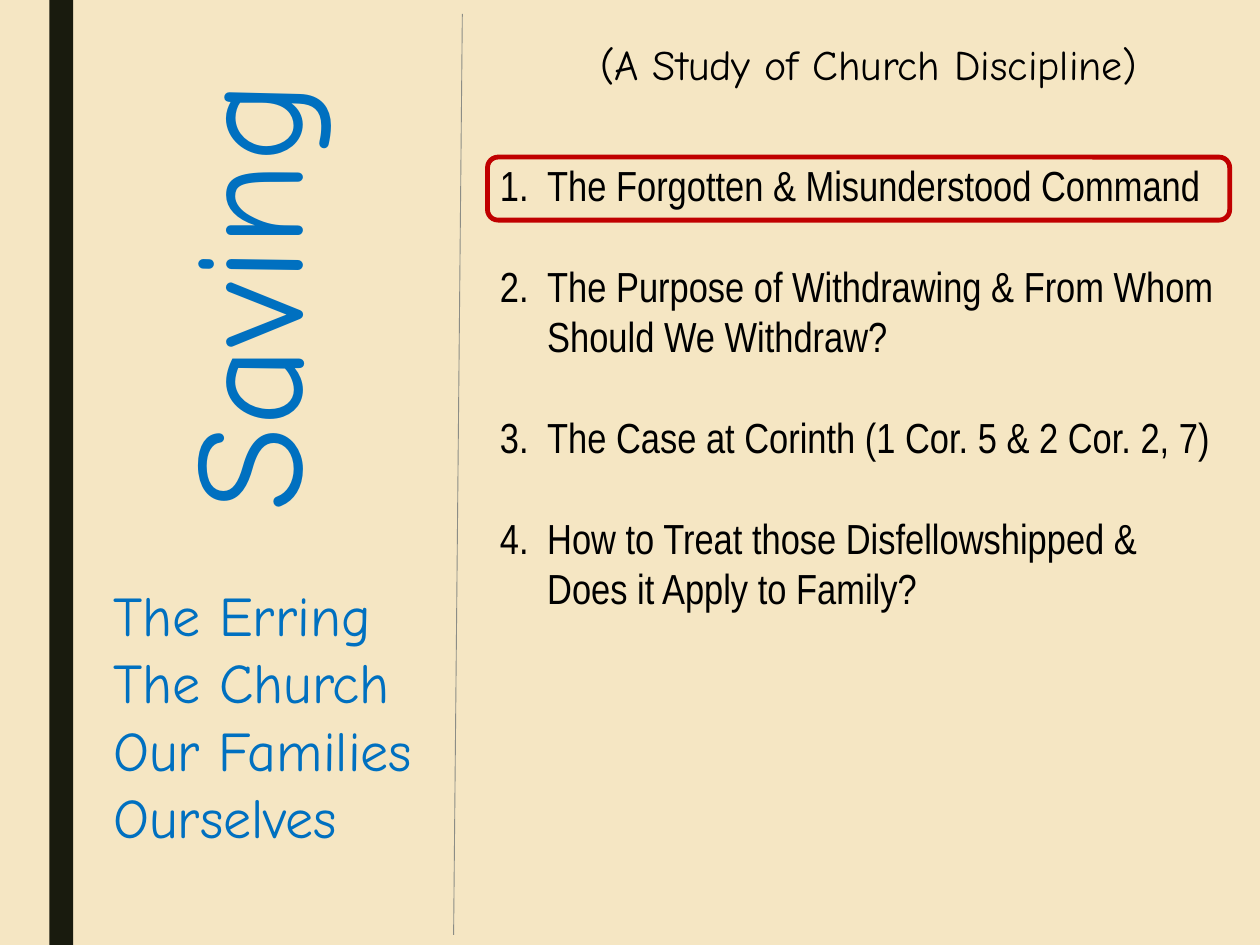
from lxml.etree import SubElement
from pptx import Presentation
from pptx.dml.color import RGBColor
from pptx.enum.shapes import MSO_CONNECTOR, MSO_SHAPE
from pptx.enum.text import MSO_AUTO_SIZE, PP_ALIGN
from pptx.oxml.ns import qn
from pptx.util import Pt


def color(value):
    return RGBColor.from_string(value)


def apply_format(target, values):
    for name, value in values.items():
        setattr(target, name, value)


class SlideBuilder:
    background = "F5E6C3"
    bar = "191B0E"
    accent = "0070C0"
    text = "000000"
    rule = "8C8D86"
    highlight = "C00000"
    display_font = "Comic Neue"
    body_font = "Arial Narrow"

    def __init__(self, slide):
        self.slide = slide
        slide.background.fill.solid()
        slide.background.fill.fore_color.rgb = color(self.background)

    def add_box(self, kind, bounds, fill=None, line=None, width=0):
        shape = self.slide.shapes.add_shape(kind, *map(Pt, bounds))
        shape.shadow.inherit = False
        if fill:
            shape.fill.solid()
            shape.fill.fore_color.rgb = color(fill)
        else:
            shape.fill.background()
        if line:
            shape.line.color.rgb = color(line)
            shape.line.width = Pt(width)
        else:
            shape.line.fill.background()
        return shape

    def add_rule(self, start, end, width):
        connector = self.slide.shapes.add_connector(
            MSO_CONNECTOR.STRAIGHT, *map(Pt, start + end))
        connector.line.color.rgb = color(self.rule)
        connector.line.width = Pt(width)
        SubElement(connector._element.spPr, qn("a:effectLst"))

    def add_text(self, lines, bounds, size, font, fill, wrap=True,
                 alignment=PP_ALIGN.LEFT, rotation=0):
        shape = self.slide.shapes.add_textbox(*map(Pt, bounds))
        shape.rotation = rotation
        frame = shape.text_frame
        apply_format(frame, {
            "word_wrap": wrap,
            "auto_size": MSO_AUTO_SIZE.SHAPE_TO_FIT_TEXT,
            "text": "\n".join(lines),
        })
        for paragraph in frame.paragraphs:
            paragraph.alignment = alignment
            run_font = paragraph.runs[0].font
            apply_format(run_font, {"name": font, "size": Pt(size)})
            run_font.color.rgb = color(fill)
        return frame

    def add_numbered_list(self, items, bounds, size, indent, gap):
        frame = self.add_text(items, bounds, size, self.body_font, self.text)
        for index, paragraph in enumerate(frame.paragraphs):
            paragraph.space_before = Pt(gap if index else 0)
            properties = paragraph._p.get_or_add_pPr()
            properties.set("marL", str(Pt(indent)))
            properties.set("indent", str(-Pt(indent)))
            SubElement(properties, qn("a:buFont"), typeface="+mj-lt")
            SubElement(properties, qn("a:buAutoNum"), type="arabicPeriod")


def main():
    presentation = Presentation()
    apply_format(presentation, {"slide_width": Pt(720), "slide_height": Pt(540)})
    slide = presentation.slides.add_slide(presentation.slide_layouts[6])
    builder = SlideBuilder(slide)

    builder.add_box(MSO_SHAPE.RECTANGLE, (28.2, 0, 13.6, 540), fill=builder.bar)
    builder.add_text(["Saving"], (-12.2, 112.3, 301, 113.8), 88,
                     builder.display_font, builder.accent,
                     alignment=PP_ALIGN.CENTER, rotation=270)
    builder.add_text(["The Erring", "The Church", "Our Families", "Ourselves"],
                     (57.6, 328.3, 203.8, 162.7), 32,
                     builder.display_font, builder.accent, wrap=False)
    builder.add_rule((259.2, 534.2), (264.2, 7.9), 0.5)

    column_left, column_width = 278.6, 424.1
    builder.add_text(["(A Study of Church Discipline)"],
                     (column_left, 18.7, 435.6, 36), 24,
                     builder.display_font, builder.text,
                     alignment=PP_ALIGN.CENTER)
    topics = [
        "The Forgotten & Misunderstood Command",
        "The Purpose of Withdrawing & From Whom Should We Withdraw?",
        "The Case at Corinth (1 Cor. 5 & 2 Cor. 2, 7)",
        "How to Treat those Disfellowshipped & Does it Apply to Family?",
    ]
    builder.add_numbered_list(topics, (column_left, 87.8, column_width, 269.3),
                              size=24, indent=27, gap=28.8)
    builder.add_box(MSO_SHAPE.ROUNDED_RECTANGLE,
                    (column_left, 89.8, column_width, 36),
                    line=builder.highlight, width=2.75)

    presentation.save("out.pptx")


if __name__ == "__main__":
    main()
